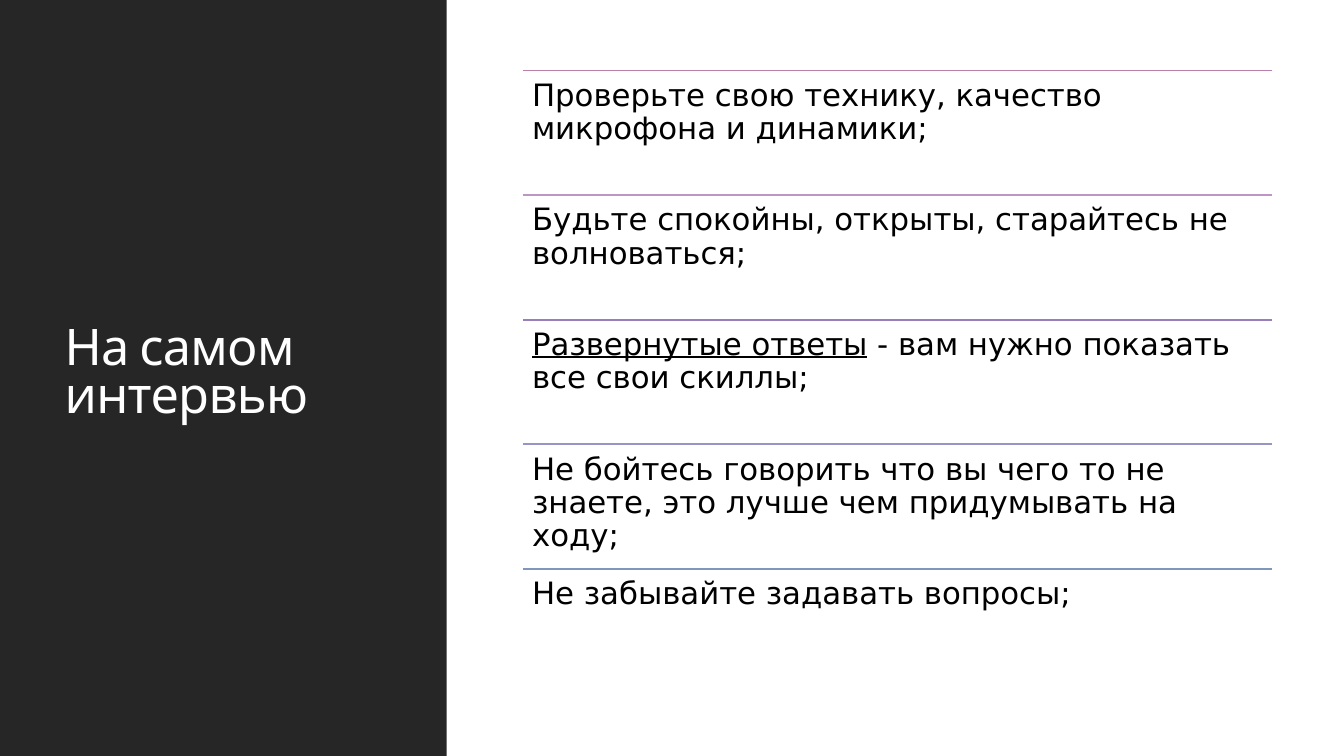
"""Build the interview tips slide: dark title panel and five ruled tips."""
from lxml import etree
from pptx import Presentation
from pptx.dml.color import RGBColor
from pptx.enum import shapes, text
from pptx.oxml import ns
from pptx.util import Pt

TITLE = "На самом интервью"
TIPS = [
    ("BA7FAB", "", "Проверьте свою технику, качество микрофона и динамики;"),
    ("BE96C6", "", "Будьте спокойны, открыты, старайтесь не волноваться;"),
    ("987FBA", "Развернутые ответы", " - вам нужно показать все свои скиллы;"),
    ("9696C6", "", "Не бойтесь говорить что вы чего то не знаете, "
                   "это лучше чем придумывать на ходу;"),
    ("7F97BA", "", "Не забывайте задавать вопросы;"),
]
COLORS = {"panel": "262626", "title": "FFFFFF", "tip": "000000"}
SLIDE_WIDTH, SLIDE_HEIGHT = 960, 540
PANEL_WIDTH = 319
TIP_LEFT, TIP_TOP, TIP_WIDTH, TIP_HEIGHT = 373.5, 50.4, 535, 89
TIP_INSET = 6.6


def style(run, font, size, color):
    run.font.name = font
    run.font.size = Pt(size)
    run.font.color.rgb = RGBColor.from_string(COLORS[color])


def add_title(slide):
    title = slide.shapes.title
    title.left, title.top, title.width, title.height = map(Pt, (39, 41, 243, 454))
    frame = title.text_frame
    frame.text = TITLE
    frame.word_wrap = True
    frame.auto_size = text.MSO_AUTO_SIZE.NONE
    frame.vertical_anchor = text.MSO_ANCHOR.MIDDLE
    heading = frame.paragraphs[0]
    heading.alignment = text.PP_ALIGN.LEFT
    heading.line_spacing = 0.8
    style(heading.runs[0], "Cabin", 36, "title")
    heading.runs[0]._r.get_or_add_rPr().set("spc", "-50")

    panel = slide.shapes.add_shape(
        shapes.MSO_SHAPE.RECTANGLE, 0, 0, Pt(PANEL_WIDTH), Pt(SLIDE_HEIGHT))
    panel.shadow.inherit = False
    panel.fill.solid()
    panel.fill.fore_color.rgb = RGBColor.from_string(COLORS["panel"])
    panel.line.fill.background()
    title.element.addprevious(panel.element)


def add_tip(slide, top, rule_color, lead, rest):
    rule = slide.shapes.add_connector(
        shapes.MSO_CONNECTOR.STRAIGHT,
        Pt(TIP_LEFT), Pt(top), Pt(TIP_LEFT + TIP_WIDTH), Pt(top))
    rule.line.color.rgb = RGBColor.from_string(rule_color)
    rule.line.width = Pt(1.25)
    etree.SubElement(rule.element.spPr, ns.qn("a:effectLst"))

    tip = slide.shapes.add_textbox(
        Pt(TIP_LEFT), Pt(top), Pt(TIP_WIDTH), Pt(TIP_HEIGHT))
    frame = tip.text_frame
    frame.word_wrap = True
    frame.margin_left = frame.margin_right = Pt(TIP_INSET)
    frame.margin_top = frame.margin_bottom = Pt(TIP_INSET)
    advice = frame.paragraphs[0]
    advice.line_spacing = 0.9
    for part in filter(None, (lead, rest)):
        run = advice.add_run()
        run.text = part
        style(run, "DejaVu Sans", 22, "tip")
        if part == lead:
            run.font.underline = True


def main():
    deck = Presentation()
    deck.slide_width, deck.slide_height = Pt(SLIDE_WIDTH), Pt(SLIDE_HEIGHT)
    slide = deck.slides.add_slide(deck.slide_layouts[5])
    add_title(slide)
    for row, tip in enumerate(TIPS):
        add_tip(slide, TIP_TOP + row * TIP_HEIGHT, *tip)
    deck.save("out.pptx")


if __name__ == "__main__":
    main()
